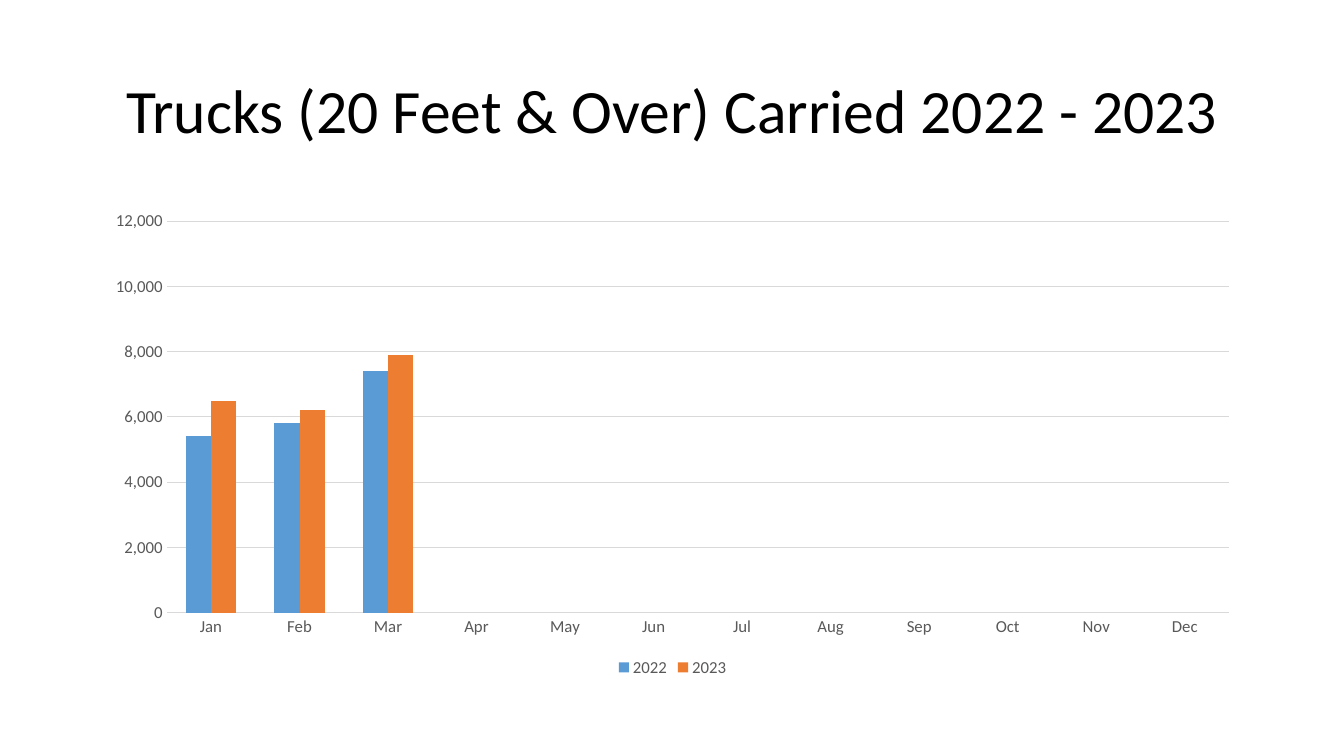
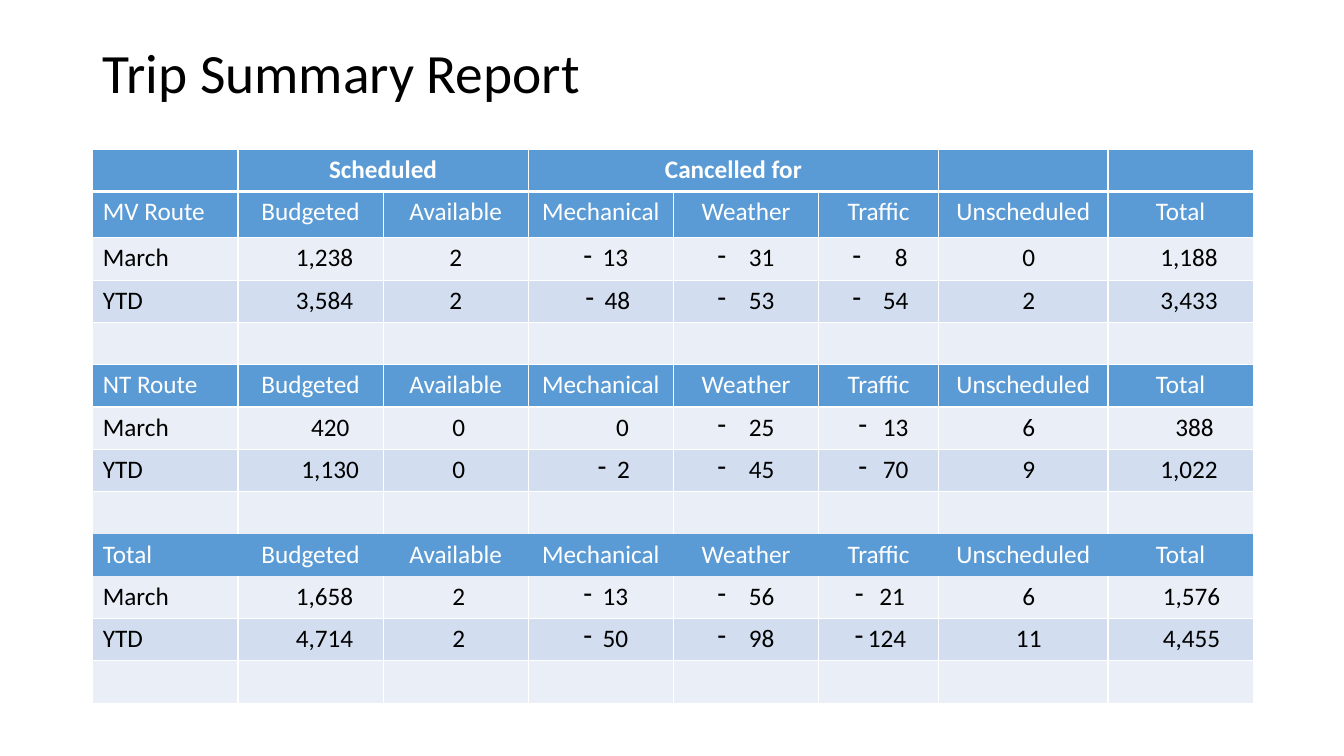
import dataclasses
import typing

import lxml.etree
import pptx
import pptx.chart.data
import pptx.dml.color
import pptx.enum.chart
import pptx.enum.text
import pptx.oxml.ns
import pptx.util

Inches = pptx.util.Inches
Pt = pptx.util.Pt
RGBColor = pptx.dml.color.RGBColor
Align = pptx.enum.text.PP_ALIGN
ChartEnum = pptx.enum.chart

BLACK = RGBColor(0x00, 0x00, 0x00)
WHITE = RGBColor(0xFF, 0xFF, 0xFF)
GREY = RGBColor(0x59, 0x59, 0x59)
GRID_GREY = RGBColor(0xD9, 0xD9, 0xD9)
BLUE = RGBColor(0x5B, 0x9B, 0xD5)
ORANGE = RGBColor(0xED, 0x7D, 0x31)
PALE = RGBColor(0xEA, 0xEF, 0xF7)
PALE_DARK = RGBColor(0xD2, 0xDE, 0xEF)

FONT = "Calibri"
LEFT, WIDTH = Inches(0.92), Inches(11.5)
TITLE_ONLY = 5

MONTHS = ["Jan", "Feb", "Mar", "Apr", "May", "Jun",
          "Jul", "Aug", "Sep", "Oct", "Nov", "Dec"]
COLUMN_WIDTHS = [1.44, 1.44, 1.44, 1.44, 1.44, 1.19, 1.68, 1.44]
ROW_HEIGHT, FIRST_HEADING_HEIGHT = 0.42, 0.46
HEADINGS = ["Budgeted", "Available", "Mechanical", "Weather",
            "Traffic", "Unscheduled", "Total"]


@dataclasses.dataclass(frozen=True)
class YearSeries:
    name: str
    trucks: list[int]
    color: RGBColor


@dataclasses.dataclass(frozen=True)
class Figure:
    text: str
    margin: float = 0
    hang: float = 0


@dataclasses.dataclass(frozen=True)
class Route:
    name: str
    march: list[Figure]
    ytd: list[Figure]
    ruled: bool = True


@dataclasses.dataclass(frozen=True)
class RowStyle:
    fill: RGBColor
    text: RGBColor = BLACK
    bold: bool = False
    top: float = 1
    bottom: float = 1
    side: float = 1


YEARS = [
    YearSeries("2022", [5400, 5800, 7400], BLUE),
    YearSeries("2023", [6500, 6200, 7900], ORANGE),
]
ROUTES = [
    Route(
        "MV Route",
        [Figure("1,238", 0.28), Figure("2"), Figure("13", 0.29, 0.19),
         Figure("31", 0.31, 0.31), Figure("8", 0.45, 0.42),
         Figure("0", 0.11), Figure("1,188", 0.17)],
        [Figure("3,584", 0.28), Figure("2"), Figure("48", 0.33, 0.19),
         Figure("53", 0.31, 0.31), Figure("54", 0.34, 0.3),
         Figure("2", 0.11), Figure("3,433", 0.17)],
    ),
    Route(
        "NT Route",
        [Figure("420", 0.39), Figure("0", 0.06), Figure("0", 0.43),
         Figure("25", 0.31, 0.31), Figure("13", 0.34, 0.24),
         Figure("6", 0.11), Figure("388", 0.28)],
        [Figure("1,130", 0.39), Figure("0", 0.06), Figure("2", 0.45, 0.19),
         Figure("45", 0.31, 0.31), Figure("70", 0.34, 0.24),
         Figure("9", 0.11), Figure("1,022", 0.17)],
    ),
    Route(
        "Total",
        [Figure("1,658", 0.28), Figure("2", 0.06), Figure("13", 0.29, 0.19),
         Figure("56", 0.31, 0.31), Figure("21", 0.27, 0.24),
         Figure("6", 0.11), Figure("1,576", 0.22)],
        [Figure("4,714", 0.28), Figure("2", 0.06), Figure("50", 0.29, 0.19),
         Figure("98", 0.31, 0.31), Figure("124", 0.17, 0.13),
         Figure("11", 0.11), Figure("4,455", 0.22)],
        ruled=False,
    ),
]


def apply_format(target: typing.Any, values: dict[str, typing.Any]) -> None:
    for attribute, value in values.items():
        setattr(target, attribute, value)


def format_font(font: typing.Any, size: float, color: RGBColor, bold: bool = False) -> None:
    apply_format(font, {"name": FONT, "size": Pt(size), "bold": bold})
    font.color.rgb = color


def add_titled_slide(deck: typing.Any, text: str, height: float, size: float,
                     alignment: Align) -> typing.Any:
    slide = deck.slides.add_slide(deck.slide_layouts[TITLE_ONLY])
    title = slide.shapes.title
    apply_format(title, {"left": LEFT, "top": Inches(0.4),
                         "width": WIDTH, "height": Inches(height)})
    title.text_frame.text = text
    apply_format(title.text_frame, {
        "vertical_anchor": pptx.enum.text.MSO_ANCHOR.MIDDLE,
        "auto_size": pptx.enum.text.MSO_AUTO_SIZE.NONE,
        "word_wrap": True,
    })
    heading = title.text_frame.paragraphs[0]
    apply_format(heading, {"alignment": alignment, "line_spacing": 0.9})
    format_font(heading.runs[0].font, size, BLACK)
    return slide


def add_truck_chart(slide: typing.Any) -> None:
    data = pptx.chart.data.CategoryChartData(number_format="#,##0")
    data.categories = MONTHS
    for year in YEARS:
        missing = [None] * (len(MONTHS) - len(year.trucks))
        data.add_series(year.name, year.trucks + missing)
    chart = slide.shapes.add_chart(
        ChartEnum.XL_CHART_TYPE.COLUMN_CLUSTERED,
        LEFT, Inches(2), WIDTH, Inches(4.76), data).chart
    apply_format(chart, {"has_title": False, "has_legend": True})
    format_font(chart.font, 10, BLACK)
    apply_format(chart.legend, {
        "position": ChartEnum.XL_LEGEND_POSITION.BOTTOM,
        "include_in_layout": False,
    })
    format_font(chart.legend.font, 12, GREY)

    for axis in (chart.category_axis, chart.value_axis):
        apply_format(axis, {
            "major_tick_mark": ChartEnum.XL_TICK_MARK.NONE,
            "minor_tick_mark": ChartEnum.XL_TICK_MARK.NONE,
        })
        axis.format.line.fill.background()
        format_font(axis.tick_labels.font, 12, GREY)
    trucks_axis = chart.value_axis
    apply_format(trucks_axis, {
        "minimum_scale": 0, "maximum_scale": 12000,
        "major_unit": 2000, "has_major_gridlines": True,
    })
    apply_format(trucks_axis.tick_labels, {
        "number_format": "#,##0", "number_format_is_linked": False})
    gridline = trucks_axis.major_gridlines.format.line
    gridline.color.rgb = GRID_GREY
    gridline.width = Pt(0.75)

    plot = chart.plots[0]
    apply_format(plot, {"gap_width": 150, "overlap": 0, "vary_by_categories": False})
    for columns, year in zip(plot.series, YEARS):
        columns.format.fill.solid()
        columns.format.fill.fore_color.rgb = year.color


def set_borders(cell: typing.Any, style: RowStyle) -> None:
    properties = cell._tc.get_or_add_tcPr()
    widths = {"lnL": style.side, "lnR": style.side,
              "lnT": style.top, "lnB": style.bottom}
    for position, (side, width) in enumerate(widths.items()):
        border = lxml.etree.Element(pptx.oxml.ns.qn(f"a:{side}"))
        properties.insert(position, border)
        if width:
            border.set("w", str(Pt(width)))
            fill = lxml.etree.SubElement(border, pptx.oxml.ns.qn("a:solidFill"))
            color = lxml.etree.SubElement(fill, pptx.oxml.ns.qn("a:srgbClr"))
            color.set("val", str(WHITE))
        else:
            lxml.etree.SubElement(border, pptx.oxml.ns.qn("a:noFill"))


def write_figure(cell: typing.Any, figure: Figure, style: RowStyle, alignment: Align) -> None:
    paragraph = cell.text_frame.paragraphs[0]
    paragraph.alignment = alignment
    run = paragraph.add_run()
    run.text = figure.text
    format_font(run.font, 18, style.text, style.bold)
    properties = paragraph._p.get_or_add_pPr()
    properties.set("marL", str(Inches(figure.margin)))
    properties.set("indent", str(-Inches(figure.hang)))
    if figure.hang:
        dash = lxml.etree.SubElement(properties, pptx.oxml.ns.qn("a:buChar"))
        dash.set("char", "-")


def trip_rows() -> list[tuple[RowStyle, list[Figure]]]:
    blank = [Figure("")] * len(COLUMN_WIDTHS)
    groups = [Figure(""), Figure("Scheduled"), Figure(""), Figure("Cancelled for"),
              *[Figure("")] * 4]
    rows = [(RowStyle(BLUE, WHITE, bold=True, bottom=3), groups)]
    for index, route in enumerate(ROUTES):
        rule = 1 if route.ruled else 0
        heading_top = 3 if index == 0 else rule
        following_rule = 1 if index + 1 == len(ROUTES) or ROUTES[index + 1].ruled else 0
        rows += [
            (RowStyle(BLUE, WHITE, top=heading_top, bottom=rule, side=rule),
             [Figure(text) for text in [route.name, *HEADINGS]]),
            (RowStyle(PALE, top=rule), [Figure("March"), *route.march]),
            (RowStyle(PALE_DARK), [Figure("YTD"), *route.ytd]),
            (RowStyle(PALE, bottom=following_rule), blank),
        ]
    return rows


def add_trip_table(slide: typing.Any) -> None:
    rows = trip_rows()
    trips = slide.shapes.add_table(
        len(rows), len(COLUMN_WIDTHS), LEFT, Inches(1.48), WIDTH, Inches(5.5)).table
    apply_format(trips, {"first_row": False, "horz_banding": False})
    for column, width in zip(trips.columns, COLUMN_WIDTHS):
        column.width = Inches(width)
    for index, (style, figures) in enumerate(rows):
        trips.rows[index].height = Inches(FIRST_HEADING_HEIGHT if index == 1 else ROW_HEIGHT)
        for column, figure in enumerate(figures):
            cell = trips.cell(index, column)
            cell.fill.solid()
            cell.fill.fore_color.rgb = style.fill
            set_borders(cell, style)
            if figure.text:
                write_figure(cell, figure, style, Align.CENTER if column else Align.LEFT)
    for first, last in ((1, 2), (3, 5)):
        trips.cell(0, first).merge(trips.cell(0, last))


def main() -> None:
    deck = pptx.Presentation()
    apply_format(deck, {"slide_width": Inches(13.33), "slide_height": Inches(7.5)})
    add_truck_chart(add_titled_slide(
        deck, "Trucks (20 Feet & Over) Carried 2022 - 2023", 1.45, 44, Align.CENTER))
    add_trip_table(add_titled_slide(deck, "Trip Summary Report", 0.7, 39.6, Align.LEFT))
    deck.save("out.pptx")


if __name__ == "__main__":
    main()
